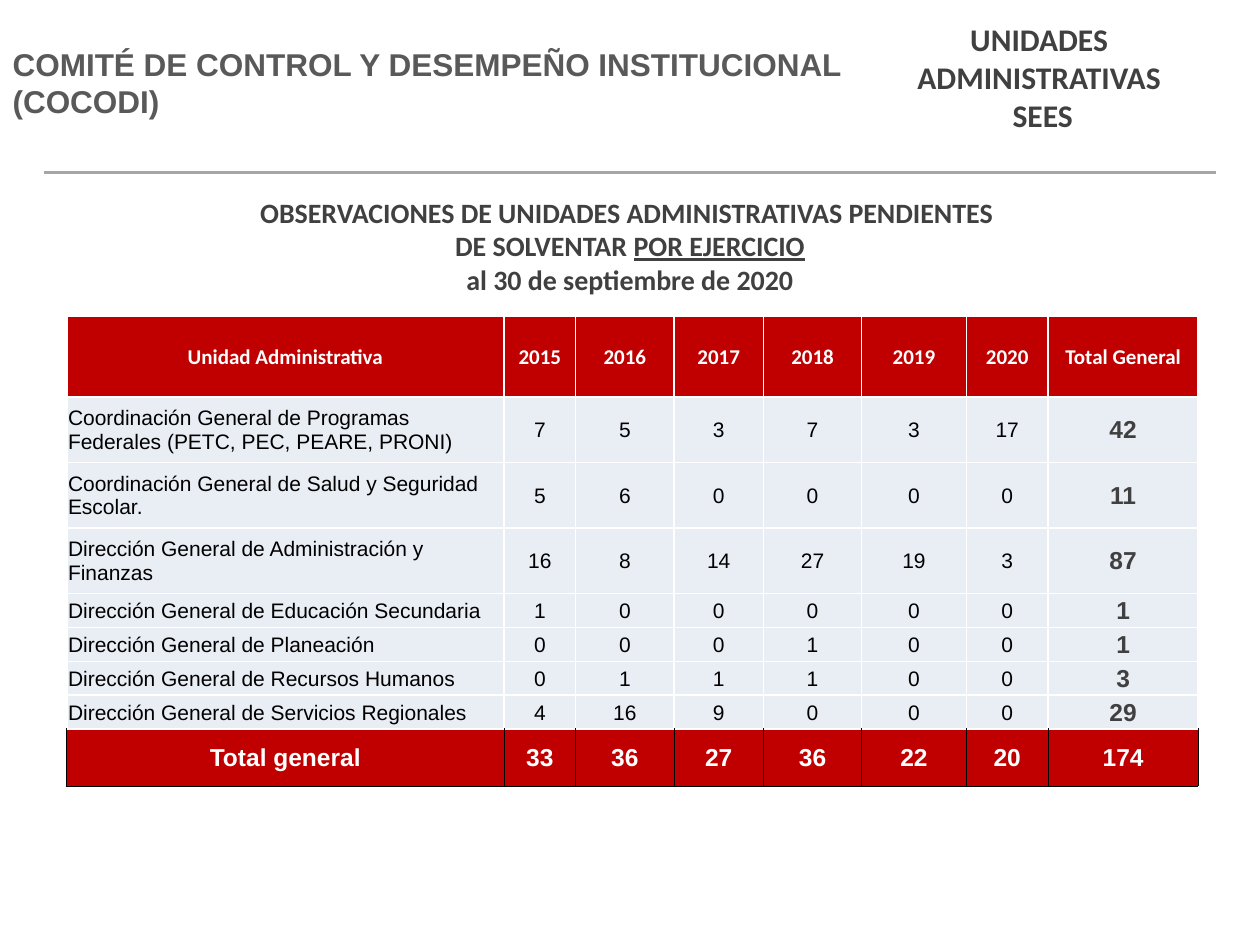
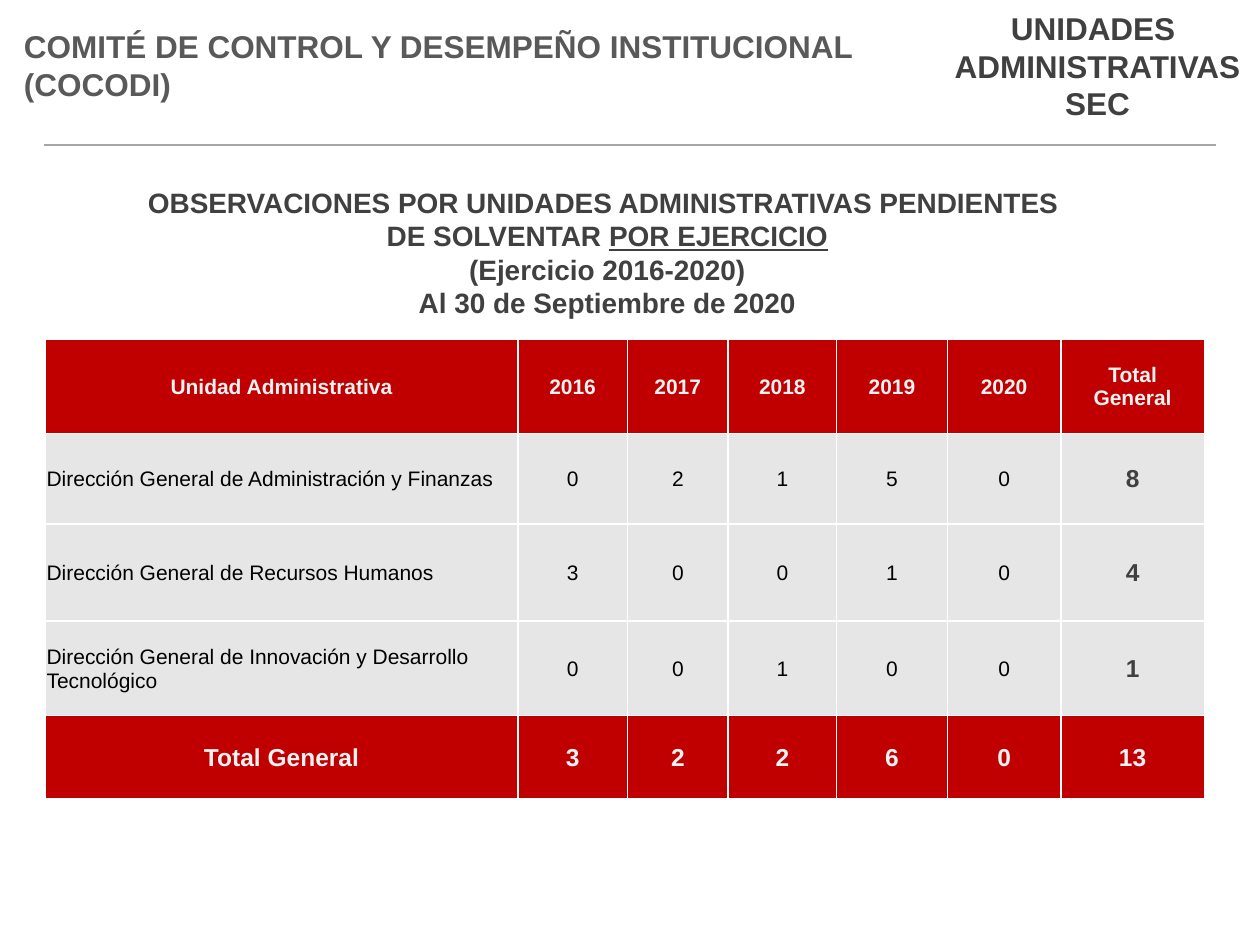
import pptx
import pptx.util
import pptx.dml.color
import pptx.enum.shapes
import pptx.enum.text
import pptx.oxml.ns
from lxml import etree

RGB = pptx.dml.color.RGBColor
ALIGN = pptx.enum.text.PP_ALIGN
MIDDLE = pptx.enum.text.MSO_ANCHOR.MIDDLE

WHITE = RGB(0xFF, 0xFF, 0xFF)
OFF_WHITE = RGB(0xF2, 0xF2, 0xF2)
BLACK = RGB(0x00, 0x00, 0x00)
RED = RGB(0xC0, 0x00, 0x00)
TITLE_GRAY = RGB(0x59, 0x59, 0x59)
DARK_GRAY = RGB(0x40, 0x40, 0x40)
RULE_GRAY = RGB(0xA6, 0xA6, 0xA6)
PALE_BLUE = RGB(0xE9, 0xED, 0xF4)
PALE_GRAY = RGB(0xE7, 0xE6, 0xE6)

EMU_PER_PX = 9144  # 100 px to the inch
COMMITTEE = "COMITÉ DE CONTROL Y DESEMPEÑO INSTITUCIONAL (COCODI)"
UNDERLINED = "POR EJERCICIO"


def px(length):
    return pptx.util.Emu(length * EMU_PER_PX)


class Report:
    """Holds the shared style and the slide being built."""

    def __init__(self):
        self.deck = pptx.Presentation()
        self.deck.slide_width, self.deck.slide_height = px(1000), px(750)
        self.slide = None

    def format(self, paragraph, size, color, font="Arial", bold=True, align=ALIGN.CENTER):
        paragraph.alignment = align
        for run in paragraph.runs:
            run.font.name = font
            run.font.size = pptx.util.Pt(size)
            run.font.bold = bold
            run.font.color.rgb = color

    def start_slide(self, left, top, width, height):
        """Adds a slide with the committee name as its title."""
        self.slide = self.deck.slides.add_slide(self.deck.slide_layouts[5])
        title = self.slide.shapes.title
        title.left, title.top = px(left), px(top)
        title.width, title.height = px(width), px(height)
        frame = title.text_frame
        frame.text = COMMITTEE
        frame.word_wrap = True
        frame.auto_size = pptx.enum.text.MSO_AUTO_SIZE.NONE
        frame.vertical_anchor = MIDDLE
        self.format(frame.paragraphs[0], 18, TITLE_GRAY, align=ALIGN.LEFT)

    def rule(self, y):
        line = self.slide.shapes.add_connector(
            pptx.enum.shapes.MSO_CONNECTOR.STRAIGHT, px(35), px(y), px(965), px(y))
        line.line.color.rgb = RULE_GRAY
        line.line.width = pptx.util.Pt(1.5)
        etree.SubElement(line._element.spPr, pptx.oxml.ns.qn("a:effectLst"))

    def heading(self, box, lines, size, font):
        """Adds centred lines; the words in UNDERLINED get an underline."""
        frame = self.slide.shapes.add_textbox(*map(px, box)).text_frame
        frame.word_wrap = True
        frame.text = "\n".join(lines)
        for paragraph in frame.paragraphs:
            before, mark, _ = paragraph.text.partition(UNDERLINED)
            if mark:
                paragraph.text = before
                underlined = paragraph.add_run()
                underlined.text = mark
                underlined.font.underline = True
            self.format(paragraph, size, DARK_GRAY, font)

    def borders(self, cell, side_color, side_width):
        """Draws the cell edges; the top edge is always white."""
        edges = {"lnL": (side_color, side_width), "lnR": (side_color, side_width),
                 "lnT": (WHITE, 1), "lnB": (side_color, side_width)}
        properties = cell._tc.get_or_add_tcPr()
        for index, (edge, (color, width)) in enumerate(edges.items()):
            line = etree.Element(pptx.oxml.ns.qn(f"a:{edge}"), w=str(pptx.util.Pt(width)))
            fill = etree.SubElement(line, pptx.oxml.ns.qn("a:solidFill"))
            etree.SubElement(fill, pptx.oxml.ns.qn("a:srgbClr"), val=str(color))
            properties.insert(index, line)

    def cell(self, cell, text, fill, size, color, font="Arial", bold=True,
             align=ALIGN.CENTER, side_color=WHITE, side_width=1):
        cell.fill.solid()
        cell.fill.fore_color.rgb = fill
        cell.vertical_anchor = MIDDLE
        cell.margin_left = cell.margin_right = cell.margin_top = px(1)
        cell.margin_bottom = 0
        cell.text_frame.text = str(text)
        for paragraph in cell.text_frame.paragraphs:
            self.format(paragraph, size, color, font, bold, align)
        self.borders(cell, side_color, side_width)

    def table(self, left, top, widths, heights, header, units, total_label,
              body_fill, light, header_font="Arial", **total_edges):
        """Adds the counts per unit and year, with totals worked out."""
        grid = self.slide.shapes.add_table(
            len(heights), len(widths), px(left), px(top),
            px(sum(widths)), px(sum(heights))).table
        for column, width in zip(grid.columns, widths):
            column.width = px(width)
        for row, height in zip(grid.rows, heights):
            row.height = px(height)

        # Header row
        for column, label in enumerate(header):
            self.cell(grid.cell(0, column), label, RED, 12, light, header_font)

        # One row for each unit
        for row, (unit, counts) in enumerate(units.items(), 1):
            self.cell(grid.cell(row, 0), unit, body_fill, 12, BLACK,
                      bold=False, align=ALIGN.LEFT)
            for column, count in enumerate(counts, 1):
                self.cell(grid.cell(row, column), count, body_fill, 12, BLACK, bold=False)
            self.cell(grid.cell(row, len(widths) - 1), sum(counts), body_fill, 14, DARK_GRAY)

        # Total row
        year_totals = [sum(year) for year in zip(*units.values())]
        totals = [total_label, *year_totals, sum(year_totals)]
        for column, total in enumerate(totals):
            self.cell(grid.cell(len(heights) - 1, column), total, RED, 14, light,
                      **total_edges)


def main():
    report = Report()

    # Slide 1: SEES units
    report.start_slide(0, 0, 693, 131)
    report.rule(137)
    report.heading((658, 11, 339, 101), ["UNIDADES ", "ADMINISTRATIVAS ", "SEES"], 18, "Calibri")
    report.heading((112, 150, 776, 91), [
        "OBSERVACIONES DE UNIDADES ADMINISTRATIVAS PENDIENTES ",
        "DE SOLVENTAR POR EJERCICIO",
        "al 30 de septiembre de 2020"], 16, "Calibri")
    sees_units = {
        "Coordinación General de Programas Federales (PETC, PEC, PEARE, PRONI)":
            [7, 5, 3, 7, 3, 17],
        "Coordinación General de Salud y Seguridad Escolar.": [5, 6, 0, 0, 0, 0],
        "Dirección General de Administración y Finanzas": [16, 8, 14, 27, 19, 3],
        "Dirección General de Educación Secundaria": [1, 0, 0, 0, 0, 0],
        "Dirección General de Planeación": [0, 0, 0, 1, 0, 0],
        "Dirección General de Recursos Humanos": [0, 1, 1, 1, 0, 0],
        "Dirección General de Servicios Regionales": [4, 16, 9, 0, 0, 0],
    }
    report.table(
        53, 251, [347, 57, 78, 71, 78, 83, 65, 119], [64] + [52] * 3 + [27] * 4 + [45],
        ["Unidad Administrativa", *range(2015, 2021), "Total General"],
        sees_units, "Total general", PALE_BLUE, WHITE, "Calibri",
        side_color=BLACK, side_width=0.5)

    # Slide 2: SEC units
    report.start_slide(9, 16, 702, 71)
    report.rule(115)
    report.heading((740, 2, 262, 101), ["UNIDADES ", "ADMINISTRATIVAS", "SEC"], 18, "Arial")
    report.heading((94, 142, 776, 118), [
        "OBSERVACIONES POR UNIDADES ADMINISTRATIVAS PENDIENTES ",
        "DE SOLVENTAR POR EJERCICIO",
        "(Ejercicio 2016-2020)",
        "Al 30 de Septiembre de 2020"], 16, "Arial")
    sec_units = {
        "Dirección General de Administración y Finanzas": [0, 2, 1, 5, 0],
        "Dirección General de Recursos Humanos": [3, 0, 0, 1, 0],
        "Dirección General de Innovación y Desarrollo Tecnológico": [0, 0, 1, 0, 0],
    }
    report.table(
        36, 269, [375, 87, 80, 86, 88, 90, 114], [75, 72, 77, 75, 66],
        ["Unidad Administrativa", *range(2016, 2021), "Total\nGeneral"],
        sec_units, "Total General", PALE_GRAY, OFF_WHITE)

    report.deck.save("out.pptx")


if __name__ == "__main__":
    main()
